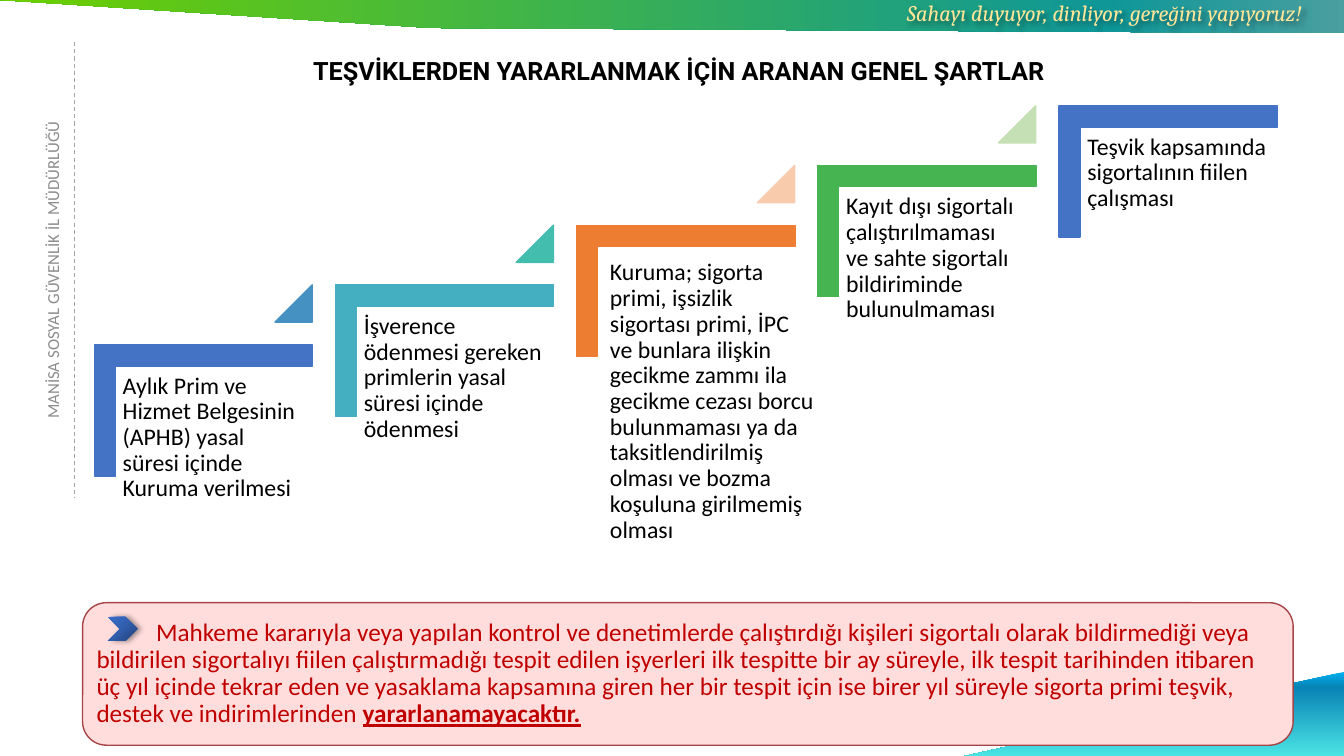
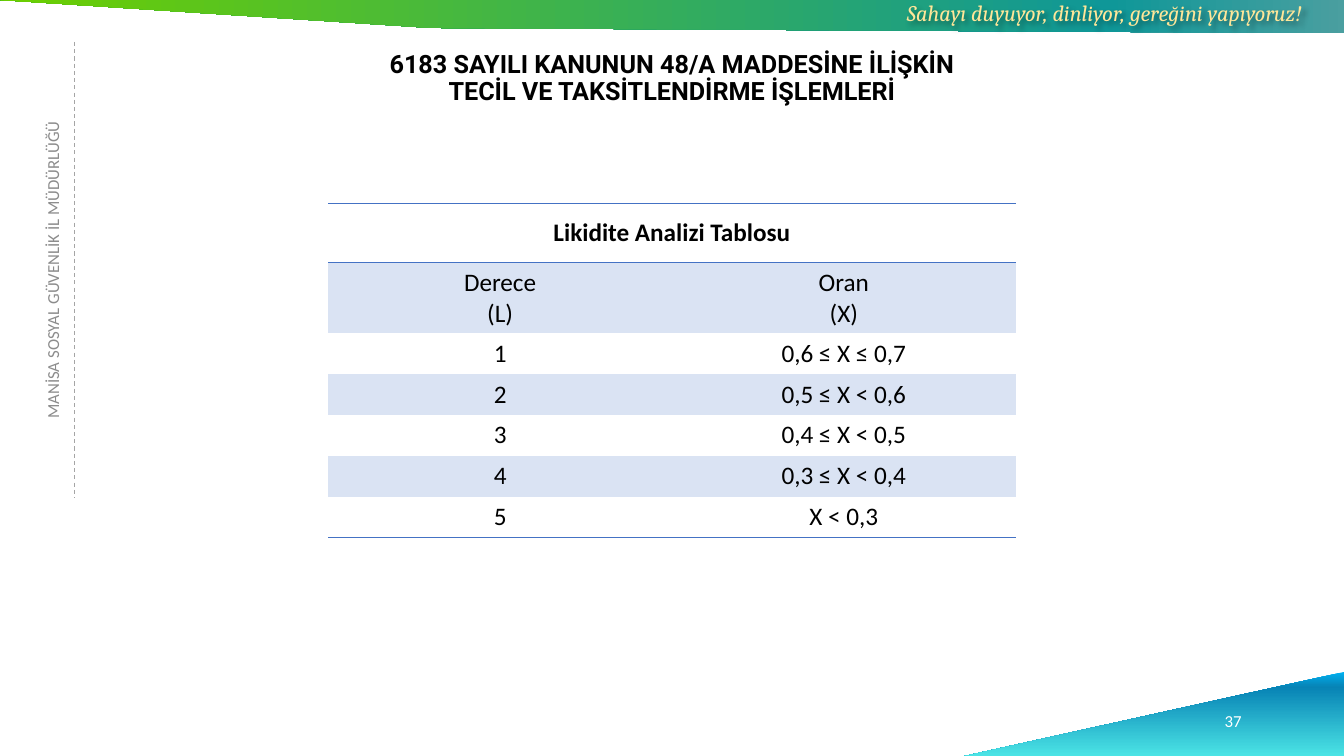
import pptx
import pptx.dml.color
import pptx.enum.dml
import pptx.enum.shapes
import pptx.enum.text
import pptx.oxml
import pptx.oxml.ns
import pptx.util

Pt = pptx.util.Pt
SHAPES = pptx.enum.shapes.MSO_SHAPE
ALIGN = pptx.enum.text.PP_ALIGN
ANCHOR = pptx.enum.text.MSO_ANCHOR
qn = pptx.oxml.ns.qn
NAMESPACE = pptx.oxml.ns.nsdecls("a")

COLORS = {
    "black": "000000", "white": "FFFFFF", "gray": "8C8C8C", "rule": "A5A5A5",
    "slogan": "FFE699", "blue": "4472C4", "steel": "4491C2", "cyan": "43AFC0",
    "teal": "43BDAE", "orange": "ED7D31", "peach": "F8CBAD", "green": "45B451",
    "mint": "C5E0B4", "band": "DAE3F3", "pink": "FFDDDD", "maroon": "A64548",
    "red": "C00000",
}
GRADIENTS = {
    "header": ([(0, "4C9FA0"), (18, "0F9798"), (100, "6DCF00")],
               '<a:lin ang="10800000" scaled="0"/>'),
    "footer": ([(0, "00B0F0"), (18, "0783B5"), (100, "4BE4E5")],
               '<a:lin ang="5400000" scaled="0"/>'),
    "chevron": ([(0, "23427A"), (50, "315EAD"), (100, "3A6FCE")],
                '<a:path path="circle"><a:fillToRect l="100000" t="100000"/></a:path>'),
}
STYLES = {
    "title": {"name": "Roboto", "size": Pt(18), "bold": True, "color": "black"},
    "slogan": {"name": "Cambria", "size": Pt(16), "italic": True, "color": "slogan"},
    "office": {"name": "Calibri", "size": Pt(12), "color": "gray"},
    "number": {"name": "Calibri", "size": Pt(12), "color": "white"},
    "step": {"name": "Calibri", "size": Pt(17), "color": "black"},
    "warning": {"name": "Calibri", "size": Pt(18), "color": "red"},
    "cell": {"name": "Calibri", "size": Pt(18), "color": "black"},
}

SLOGAN = "Sahayı duyuyor, dinliyor, gereğini yapıyoruz!"
OFFICE = "MANİSA SOSYAL GÜVENLİK İL MÜDÜRLÜĞÜ"
HEADER_BAND = [(965.5, 0), (967, 23.8), (308, 20), (0, 0)]

CONDITIONS_TITLE = "TEŞVİKLERDEN YARARLANMAK İÇİN ARANAN GENEL ŞARTLAR"
# text, bracket colour, colour of the triangle towards the next step, text box
# shift (left, top, extra width)
STEPS = [
    ("Aylık Prim ve Hizmet Belgesinin (APHB) yasal süresi içinde Kuruma verilmesi",
     "blue", "steel", (0, 0, 0)),
    ("İşverence ödenmesi gereken primlerin yasal süresi içinde ödenmesi",
     "cyan", "teal", (0, 0, 0)),
    ("Kuruma; sigorta primi, işsizlik sigortası primi, İPC ve bunlara ilişkin "
     "gecikme zammı ila gecikme cezası borcu bulunmaması ya da taksitlendirilmiş "
     "olması ve bozma koşuluna girilmemiş olması",
     "orange", "peach", (3.5, 4.5, 16)),
    ("Kayıt dışı sigortalı çalıştırılmaması\vve sahte sigortalı bildiriminde "
     "bulunulmaması", "green", "mint", (0, 0, 0)),
    ("Teşvik kapsamında sigortalının fiilen çalışması", "blue", None, (0, 0, 0)),
]
STEP_RIGHT, STEP_UP = 172.26, 42.66
WARNING = [
    ("Mahkeme kararıyla veya yapılan kontrol ve denetimlerde çalıştırdığı kişileri "
     "sigortalı olarak bildirmediği veya bildirilen sigortalıyı fiilen "
     "çalıştırmadığı tespit edilen işyerleri ilk tespitte bir ay süreyle, ilk tespit "
     "tarihinden itibaren üç yıl içinde tekrar eden ve yasaklama kapsamına giren her "
     "bir tespit için ise birer yıl süreyle sigorta primi teşvik, destek ve "
     "indirimlerinden ", {}),
    ("yararlanamayacaktır.", {"bold": True, "underline": True}),
]

DEFERRAL_TITLE = ("6183 SAYILI KANUNUN 48/A MADDESİNE İLİŞKİN\v"
                  "TECİL VE TAKSİTLENDİRME İŞLEMLERİ")
LIQUIDITY_HEADING = "Likidite Analizi Tablosu"
LIQUIDITY_ROWS = [
    ("Derece\n(L)", "Oran\n(X)"),
    ("1", "0,6 ≤ X ≤ 0,7"),
    ("2", "0,5 ≤ X < 0,6"),
    ("3", "0,4 ≤ X < 0,5"),
    ("4", "0,3 ≤ X < 0,4"),
    ("5", "X < 0,3"),
]
ROW_HEIGHTS = [42, 50] + [29.25] * 5


def rgb(color):
    return pptx.dml.color.RGBColor.from_string(COLORS[color])


def write(frame, spans, style, align=ALIGN.LEFT, anchor=ANCHOR.TOP, inset=None, spacing=None):
    """Fill a text frame; a newline starts a paragraph, a \\v breaks the line."""
    frame.word_wrap = True
    frame.vertical_anchor = anchor
    if inset is not None:
        for side in ("left", "top", "right", "bottom"):
            setattr(frame, "margin_" + side, Pt(inset))
    if isinstance(spans, str):
        spans = [(spans, {})]
    para = frame.paragraphs[0]
    for text, extra in spans:
        for number, block in enumerate(text.split("\n")):
            if number:
                para = frame.add_paragraph()
            para.alignment = align
            para.line_spacing = spacing
            for line, piece in enumerate(block.split("\v")):
                if line:
                    para.add_line_break()
                span = para.add_run()
                span.text = piece
                for key, value in {**STYLES[style], **extra}.items():
                    if key == "color":
                        span.font.color.rgb = rgb(value)
                    else:
                        setattr(span.font, key, value)


def add_text(page, at, spans, style, **layout):
    box = page.shapes.add_textbox(*map(Pt, at))
    write(box.text_frame, spans, style, **layout)
    return box


def add_shape(page, kind, at, fill=None, line=None):
    shape = page.shapes.add_shape(kind, *map(Pt, at))
    paint(shape, fill, line)
    return shape


def paint(shape, fill, line=None):
    shape.shadow.inherit = False
    if fill in GRADIENTS:
        shape.fill.background()
        stops, direction = GRADIENTS[fill]
        stop_xml = "".join(
            f'<a:gs pos="{position * 1000}"><a:srgbClr val="{color}"/></a:gs>'
            for position, color in stops)
        properties = shape._element.spPr
        properties.replace(properties.find(qn("a:noFill")), pptx.oxml.parse_xml(
            f'<a:gradFill {NAMESPACE} rotWithShape="1"><a:gsLst>{stop_xml}</a:gsLst>'
            f'{direction}</a:gradFill>'))
    else:
        shape.fill.solid()
        shape.fill.fore_color.rgb = rgb(fill)
    if line:
        shape.line.color.rgb = rgb(line)
        shape.line.width = Pt(1)
    else:
        shape.line.fill.background()


def cast_shadow(shape, angle):
    shape.shadow.inherit = False
    shape._element.spPr.find(qn("a:effectLst")).append(pptx.oxml.parse_xml(
        f'<a:outerShdw {NAMESPACE} blurRad="{Pt(4)}" dist="{Pt(3)}" dir="{angle * 60000}">'
        '<a:srgbClr val="000000"><a:alpha val="40000"/></a:srgbClr></a:outerShdw>'))


def add_page(deck):
    """Add a slide with the shared bands, slogan, rule and office name."""
    page = deck.slides.add_slide(deck.slide_layouts[6])
    corner = add_shape(page, SHAPES.RIGHT_TRIANGLE, (689, 480, 271, 60), "footer")
    corner._element.spPr.xfrm.set("flipH", "1")

    rule = page.shapes.add_connector(
        pptx.enum.shapes.MSO_CONNECTOR.STRAIGHT, Pt(53.3), Pt(30), Pt(53.3), Pt(355.5))
    rule.line.color.rgb = rgb("rule")
    rule.line.width = Pt(0.75)
    rule.line.dash_style = pptx.enum.dml.MSO_LINE.DASH
    rule._element.spPr.append(pptx.oxml.parse_xml(f"<a:effectLst {NAMESPACE}/>"))

    points = [(Pt(x), Pt(y)) for x, y in HEADER_BAND]
    outline = page.shapes.build_freeform(*points[0])
    outline.add_line_segments(points[1:], close=True)
    paint(outline.convert_to_shape(), "header")

    slogan = add_text(page, (528, -4.3, 409, 26.6), SLOGAN, "slogan", align=ALIGN.RIGHT)
    cast_shadow(slogan, 45)
    office = add_text(page, (-124.5, 178.5, 324, 28.8), OFFICE, "office",
                      align=ALIGN.CENTER, anchor=ANCHOR.MIDDLE)
    office.rotation = 270
    return page


def add_title(page, at, text, spacing=None):
    add_text(page, at, text, "title", align=ALIGN.CENTER, anchor=ANCHOR.MIDDLE,
             spacing=spacing)


def add_step(page, index, text, color, next_color, shift):
    right, up = index * STEP_RIGHT, index * STEP_UP
    bracket = add_shape(page, SHAPES.CORNER, (98.5 + right, 215.2 - up, 93.6, 156),
                        color, color)
    bracket.rotation = 90
    for number in range(2):
        bracket.adjustments[number] = 0.16
    left, top, extra = shift
    add_text(page, (82.7 + right + left, 261.8 - up + top, 141 + extra, 123),
             text, "step", inset=5, spacing=0.9)
    if next_color:
        triangle = add_shape(page, SHAPES.ISOSCELES_TRIANGLE,
                             (196.5 + right, 203.5 - up, 26.6, 26.6),
                             next_color, next_color)
        triangle.adjustments[0] = 1


def build_conditions(deck):
    page = add_page(deck)
    for index, step in enumerate(STEPS):
        add_step(page, index, *step)
    add_title(page, (162, 36, 646, 28.8), CONDITIONS_TITLE)
    warning = add_shape(page, SHAPES.ROUNDED_RECTANGLE, (59, 430.5, 864.7, 101.8),
                        "pink", "maroon")
    write(warning.text_frame, WARNING, "warning", anchor=ANCHOR.MIDDLE, inset=5,
          spacing=0.9)
    warning.text_frame.paragraphs[0]._p.get_or_add_pPr().set("indent", str(Pt(42.5)))
    chevron = add_shape(page, SHAPES.CHEVRON, (77, 440.6, 21, 17.3), "chevron")
    cast_shadow(chevron, 0)


def add_border(cell, side):
    properties = cell._tc.get_or_add_tcPr()
    position = len(properties.findall(qn("a:lnT")))
    properties.insert(position, pptx.oxml.parse_xml(
        f'<a:{side} {NAMESPACE} w="{Pt(1)}"><a:solidFill>'
        f'<a:srgbClr val="{COLORS["blue"]}"/></a:solidFill></a:{side}>'))


def build_deferral(deck):
    page = add_page(deck)
    rows = [(LIQUIDITY_HEADING, "")] + LIQUIDITY_ROWS
    frame = page.shapes.add_table(len(rows), 2, Pt(234.5), Pt(145.5), Pt(491),
                                  Pt(sum(ROW_HEIGHTS)))
    table = frame.table
    table.first_row = table.horz_banding = False
    # "No Style, No Grid"
    table._tbl.tblPr.find(qn("a:tableStyleId")).text = "{2D5ABB26-0587-4C30-8999-92F81FD0307C}"
    table.cell(0, 0).merge(table.cell(0, 1))
    for row, texts in enumerate(rows):
        table.rows[row].height = Pt(ROW_HEIGHTS[row])
        for column, text in enumerate(texts):
            cell = table.cell(row, column)
            if row % 2:
                cell.fill.solid()
                cell.fill.fore_color.rgb = rgb("band")
            else:
                cell.fill.background()
            if row == 0:
                add_border(cell, "lnT")
            if row in (0, len(rows) - 1):
                add_border(cell, "lnB")
            cell.vertical_anchor = ANCHOR.MIDDLE
            if text:
                write(cell.text_frame, [(text, {"bold": row == 0})], "cell",
                      align=ALIGN.CENTER, anchor=ANCHOR.MIDDLE)
    add_text(page, (678, 500.5, 216, 28.8), "37", "number", align=ALIGN.RIGHT,
             anchor=ANCHOR.MIDDLE)
    add_title(page, (66, 28.5, 828, 56), DEFERRAL_TITLE, spacing=0.9)


def main():
    deck = pptx.Presentation()
    deck.slide_width, deck.slide_height = Pt(960), Pt(540)
    build_conditions(deck)
    build_deferral(deck)
    deck.save("out.pptx")


if __name__ == "__main__":
    main()
